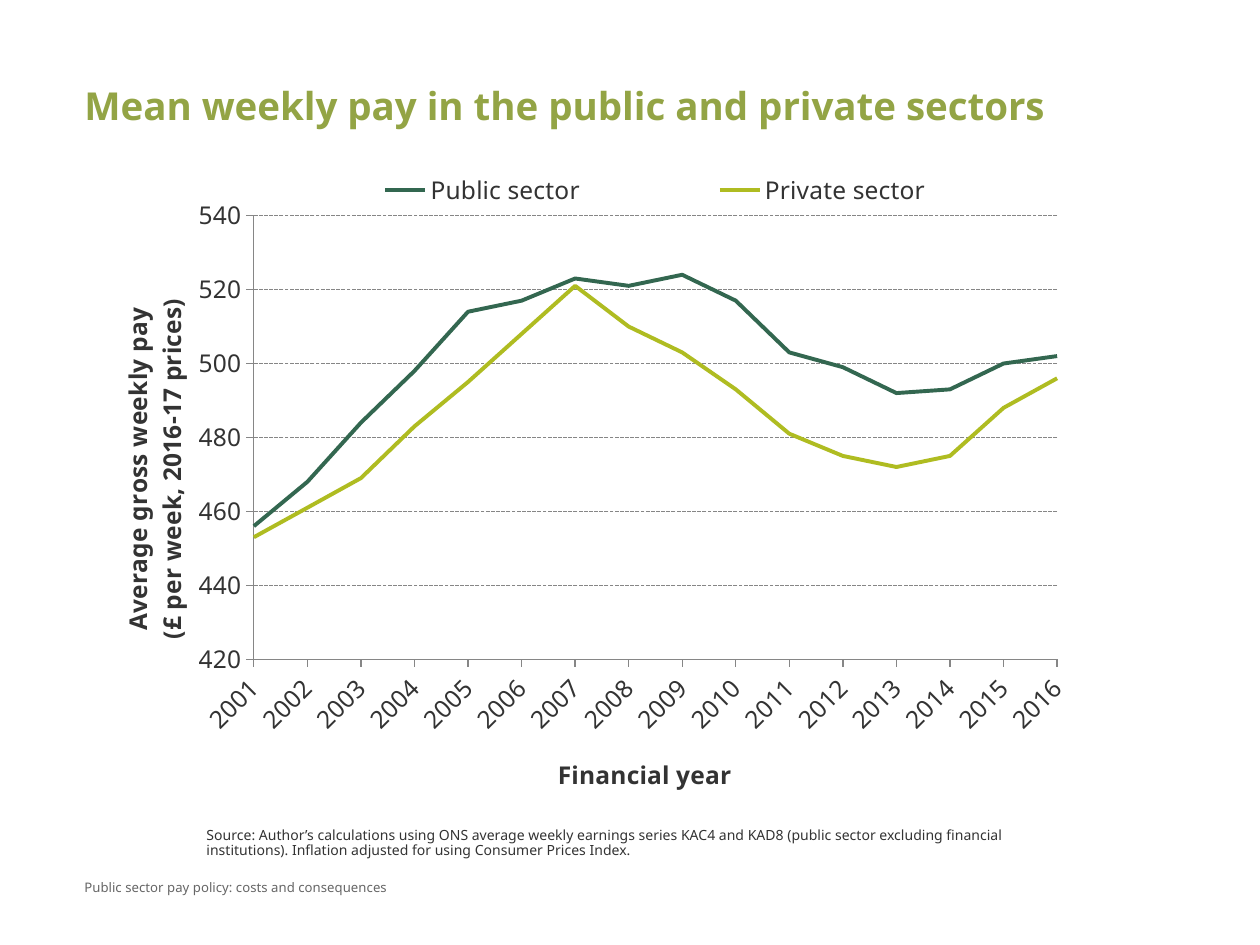
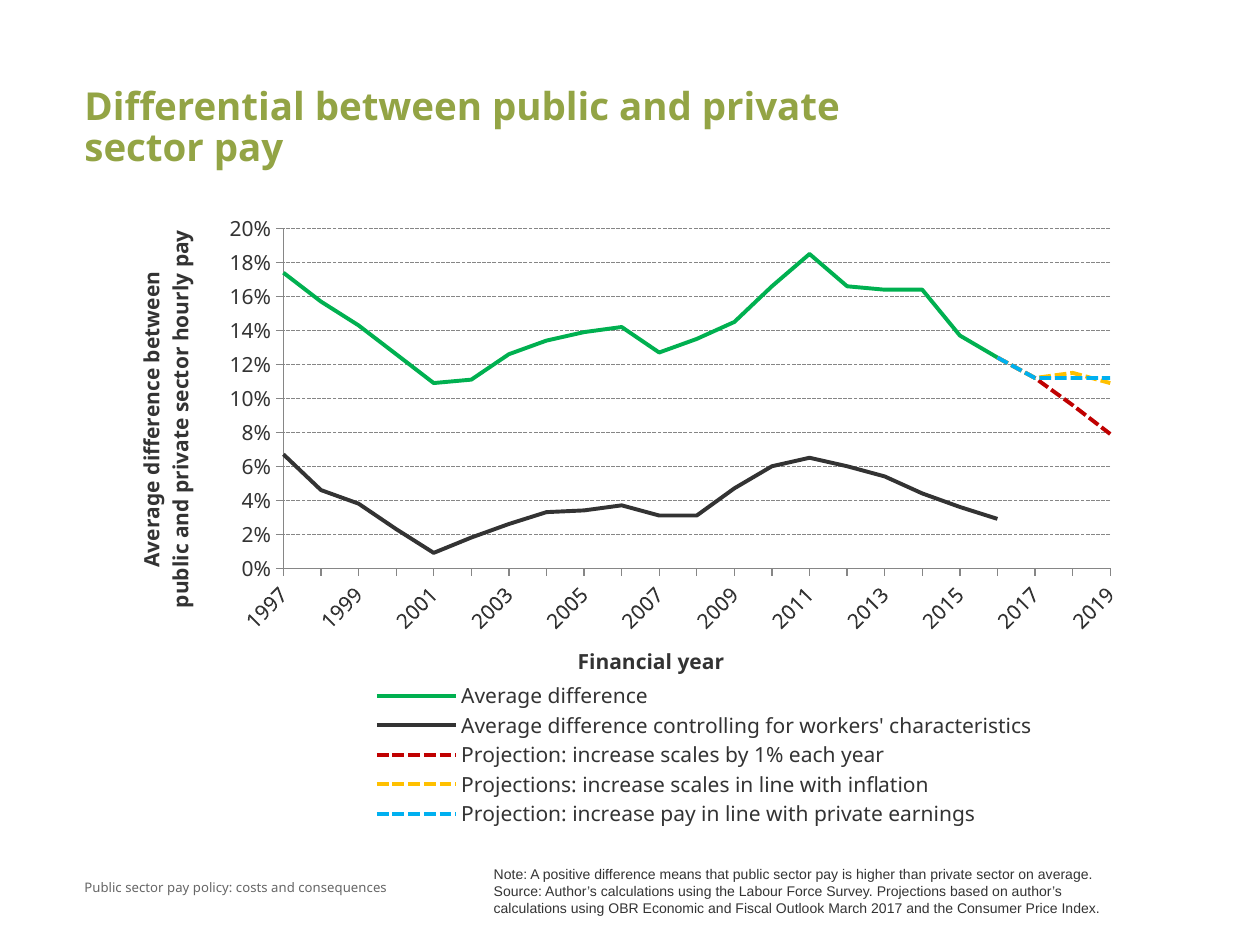
from lxml.etree import SubElement
from pptx import Presentation
from pptx.chart.data import CategoryChartData
from pptx.dml.color import RGBColor
from pptx.enum.chart import XL_CHART_TYPE, XL_LEGEND_POSITION, XL_TICK_MARK
from pptx.enum.dml import MSO_LINE
from pptx.enum.text import MSO_ANCHOR
from pptx.oxml.ns import qn
from pptx.util import Inches, Pt

OLIVE = RGBColor(0x93, 0xA4, 0x45)
TEXT = RGBColor(0x33, 0x33, 0x33)
FOOTER_GREY = RGBColor(0x66, 0x66, 0x66)
AXIS_GREY = RGBColor(0x86, 0x86, 0x86)
DARK_GREEN = RGBColor(0x33, 0x67, 0x50)
LIME = RGBColor(0xAF, 0xBC, 0x21)
GREEN = RGBColor(0x00, 0xB0, 0x50)
RED = RGBColor(0xC0, 0x00, 0x00)
AMBER = RGBColor(0xFF, 0xC0, 0x00)
BLUE = RGBColor(0x00, 0xB0, 0xF0)

FONT = "Noto Sans"
MARGIN = 0.67
FOOTER = "Public sector pay policy: costs and consequences"


def set_attributes(target, values):
    for name, value in values.items():
        setattr(target, name, value)


def set_layout(parent, index, x, y, width=None, height=None, inner=False):
    """Place a chart part by fractions of the chart's size."""
    for old_layout in parent.findall(qn("c:layout")):
        parent.remove(old_layout)
    layout = SubElement(parent, qn("c:layout"))
    parent.insert(index, layout)
    manual = SubElement(layout, qn("c:manualLayout"))
    settings = {"layoutTarget": "inner" if inner else None,
                "xMode": "edge", "yMode": "edge",
                "x": x, "y": y, "w": width, "h": height}
    for name, value in settings.items():
        if value is not None:
            SubElement(manual, qn(f"c:{name}")).set("val", str(value))


class PayDeck:
    def __init__(self):
        self.presentation = Presentation()
        set_attributes(self.presentation, {"slide_width": Inches(10),
                                           "slide_height": Inches(7.5)})
        self.slide = None

    def add_slide(self, title, title_width):
        self.slide = self.presentation.slides.add_slide(
            self.presentation.slide_layouts[6])
        self.add_text([title], (MARGIN, 0.69, title_width, 0.86), 22, OLIVE,
                      bold=True, inset=0)
        self.add_text([FOOTER], (MARGIN, 6.99, 3.17, 0.4), 7.5, FOOTER_GREY,
                      inset=0)

    def add_text(self, lines, box, size, color, font=FONT, bold=False,
                 inset=None, anchor=MSO_ANCHOR.TOP, spacing=0.9):
        frame = self.slide.shapes.add_textbox(*map(Inches, box)).text_frame
        set_attributes(frame, {"word_wrap": True, "vertical_anchor": anchor,
                               "text": "\n".join(lines)})
        if inset is not None:
            for side in ("left", "top", "right", "bottom"):
                setattr(frame, f"margin_{side}", Inches(inset))
        for paragraph in frame.paragraphs:
            paragraph.line_spacing = spacing
            set_attributes(paragraph.font, {"name": font, "size": Pt(size),
                                            "bold": bold})
            paragraph.font.color.rgb = color

    def add_note(self, lines, box, **style):
        self.add_text(lines, box, 8, TEXT, anchor=MSO_ANCHOR.MIDDLE, **style)

    def add_line_chart(self, box, size, years, series, plot, legend,
                       legend_position):
        """Add a chart; each series is (name, values, color, dash)."""
        data = CategoryChartData()
        data.categories = [str(year) for year in years]
        for name, values, *_ in series:
            data.add_series(name, values)
        chart = self.slide.shapes.add_chart(
            XL_CHART_TYPE.LINE, *map(Inches, box), data).chart
        set_attributes(chart, {"has_title": False, "has_legend": True})
        set_attributes(chart.font, {"name": FONT, "size": Pt(size)})
        chart.font.color.rgb = TEXT
        chart.plots[0].vary_by_categories = False
        for line_series, (_, _, color, dash) in zip(chart.series, series):
            line_series.smooth = False
            line = line_series.format.line
            set_attributes(line, {"width": Pt(2.25), "dash_style": dash})
            line.color.rgb = color
        set_attributes(chart.legend, {"position": legend_position,
                                      "include_in_layout": False})
        set_layout(chart.legend._element, 1, *legend)
        set_layout(chart._chartSpace.chart.plotArea, 0, *plot, inner=True)
        return chart

    def format_axis(self, axis, title, size, title_at):
        axis.major_tick_mark = XL_TICK_MARK.OUTSIDE
        axis.format.line.width = Pt(0.75)
        axis.format.line.color.rgb = AXIS_GREY
        frame = axis.axis_title.text_frame
        frame.text = title
        for paragraph in frame.paragraphs:
            set_attributes(paragraph.font, {"name": FONT, "size": Pt(size),
                                            "bold": True})
            paragraph.font.color.rgb = TEXT
        set_layout(axis.axis_title._element, 1, *title_at)

    def format_year_axis(self, chart, size, title_at, label_step=1):
        axis = chart.category_axis
        self.format_axis(axis, "Financial year", size, title_at)
        set_attributes(axis.tick_labels.font, {"name": FONT, "size": Pt(size)})
        axis.tick_labels.font.color.rgb = TEXT
        axis._element.xpath("c:txPr/a:bodyPr")[0].set("rot", "-2700000")
        skip = SubElement(axis._element, qn("c:tickLblSkip"))
        skip.set("val", str(label_step))
        axis._element.find(qn("c:noMultiLvlLbl")).addprevious(skip)

    def format_value_axis(self, chart, title, size, title_at, scale,
                          number_format):
        axis = chart.value_axis
        self.format_axis(axis, title, size, title_at)
        set_attributes(axis, dict(zip(
            ("minimum_scale", "maximum_scale", "major_unit"), scale)))
        set_attributes(axis.tick_labels, {"number_format": number_format,
                                          "number_format_is_linked": False})
        gridline = axis.major_gridlines.format.line
        set_attributes(gridline, {"width": Pt(0.75),
                                  "dash_style": MSO_LINE.SQUARE_DOT})
        gridline.color.rgb = AXIS_GREY
        # Lines start on the value axis rather than half a category away.
        for old_crossing in axis._element.findall(qn("c:crossBetween")):
            axis._element.remove(old_crossing)
        crossing = SubElement(axis._element, qn("c:crossBetween"))
        crossing.set("val", "midCat")
        axis._element.find(qn("c:crosses")).addnext(crossing)


def add_weekly_pay_slide(deck):
    deck.add_slide("Mean weekly pay in the public and private sectors", 8.27)
    public = [456, 468, 484, 498, 514, 517, 523, 521,
              524, 517, 503, 499, 492, 493, 500, 502]
    private = [453, 461, 469, 483, 495, 508, 521, 510,
               503, 493, 481, 475, 472, 475, 488, 496]
    chart = deck.add_line_chart(
        (0.83, 1.31, 7.95, 5.04), 14, range(2001, 2017),
        [("Public sector", public, DARK_GREEN, MSO_LINE.SOLID),
         ("Private sector", private, LIME, MSO_LINE.SOLID)],
        plot=(0.149, 0.08, 0.802, 0.7), legend=(0.149, 0.01, 0.802, 0.06),
        legend_position=XL_LEGEND_POSITION.TOP)
    deck.format_year_axis(chart, 14, (0.448, 0.925))
    deck.format_value_axis(
        chart, "Average gross weekly pay\n(£ per week, 2016-17 prices)", 14,
        (0.01, 0.206), (420, 540, 20), "0")
    deck.add_note(
        ["Source: Author’s calculations using ONS average weekly earnings "
         "series KAC4 and KAD8 (public sector excluding financial "
         "institutions). Inflation adjusted for using Consumer Prices Index."],
        (1.54, 6.51, 7.01, 0.37))


def add_differential_slide(deck):
    deck.add_slide("Differential between public and private sector pay", 7.01)
    average = [0.174, 0.157, 0.143, 0.126, 0.109, 0.111, 0.126, 0.134, 0.139,
               0.142, 0.127, 0.135, 0.145, 0.166, 0.185, 0.166, 0.164, 0.164,
               0.137, 0.124]
    controlled = [0.067, 0.046, 0.038, 0.023, 0.009, 0.018, 0.026, 0.033,
                  0.034, 0.037, 0.031, 0.031, 0.047, 0.06, 0.065, 0.06, 0.054,
                  0.044, 0.036, 0.029]
    projections = [
        ("Projection: increase scales by 1% each year", [0.096, 0.079], RED),
        ("Projections: increase scales in line with inflation",
         [0.115, 0.109], AMBER),
        ("Projection: increase pay in line with private earnings",
         [0.112, 0.112], BLUE)]
    unprojected = [None] * 3
    before_projection = [None] * 19
    series = [
        ("Average difference", average + unprojected, GREEN, MSO_LINE.SOLID),
        ("Average difference controlling for workers' characteristics",
         controlled + unprojected, TEXT, MSO_LINE.SOLID)]
    series += [(name, before_projection + [0.124, 0.112] + ending, color,
                MSO_LINE.SQUARE_DOT) for name, ending, color in projections]
    chart = deck.add_line_chart(
        (0.83, 1.7, 8.35, 4.88), 12, range(1997, 2020), series,
        plot=(0.17, 0.019, 0.786, 0.555), legend=(0.185, 0.758, 0.77, 0.242),
        legend_position=XL_LEGEND_POSITION.RIGHT)
    deck.format_year_axis(chart, 12, (0.446, 0.693), label_step=2)
    deck.format_value_axis(
        chart,
        "Average difference between\npublic and private sector hourly pay",
        12, (0.025, 0.018), (0, 0.2, 0.02), "0%")
    deck.add_note(
        ["Note: A positive difference means that public sector pay is higher "
         "than private sector on average.",
         "Source: Author’s calculations using the Labour Force Survey. "
         "Projections based on author’s calculations using OBR Economic and "
         "Fiscal Outlook March 2017 and the Consumer Price Index."],
        (3.82, 6.82, 5.16, 0.5), font="Arial", spacing=1.0)


def main():
    deck = PayDeck()
    add_weekly_pay_slide(deck)
    add_differential_slide(deck)
    deck.presentation.save("out.pptx")


if __name__ == "__main__":
    main()
